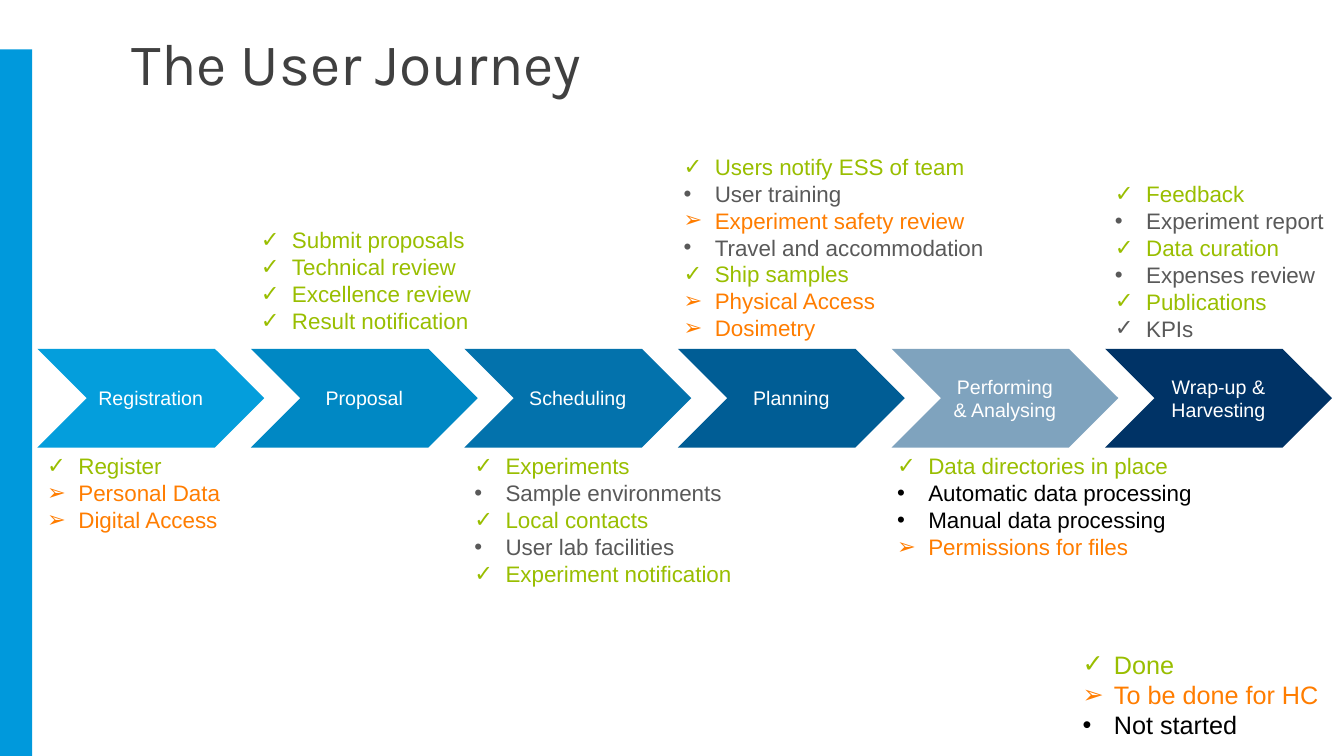
from dataclasses import dataclass
from typing import NamedTuple

from lxml import etree
from pptx import Presentation
from pptx import util as u
from pptx.dml.color import RGBColor
from pptx.enum import shapes, text
from pptx.oxml.ns import qn


@dataclass(frozen=True)
class Theme:
    font: str = "Arial"
    head: str = "Karla"
    title: float = 42
    legend: float = 18
    body: float = 16
    label: float = 14
    bar: str = "0099DC"
    ink: str = "404040"
    white: str = "FFFFFF"
    green: str = "99BE00"
    orange: str = "FF7D00"
    grey: str = "595959"
    black: str = "000000"


THEME = Theme()

# Grid: one column per step, rows are text lines
WIDE, HIGH = 13.33, 7.5
EDGE, COL = 0.37, 2.118
TOP, BASE = 3.46, 4.44
STEP_W = 2.25
PAD, LINE = 0.1, 0.27
INDENT = 0.31


class Mark(NamedTuple):
    sign: str
    color: str


DONE = Mark("✓", THEME.green)
NEXT = Mark("➢", THEME.orange)
OPEN = Mark("•", THEME.grey)
IDLE = Mark("•", THEME.black)
PLAIN = Mark("✓", THEME.grey)


class Step(NamedTuple):
    name: str
    color: str
    alpha: int = 100


@dataclass(frozen=True)
class Tasks:
    col: float
    above: bool
    items: list[tuple[str, Mark]]
    span: float = 1.6
    lift: float = 0


STEPS = [
    Step("Registration", "049EDC"),
    Step("Proposal", "0088C4"),
    Step("Scheduling", "0372AC"),
    Step("Planning", "005D95"),
    Step("Performing & Analysing", "00487E", 50),
    Step("Wrap-up & Harvesting", "003366"),
]

TASKS = [
    Tasks(0, False, [("Register", DONE), ("Personal Data", NEXT),
                     ("Digital Access", NEXT)]),
    Tasks(1, True, [("Submit proposals", DONE), ("Technical review", DONE),
                    ("Excellence review", DONE),
                    ("Result notification", DONE)], lift=0.3),
    Tasks(2, False, [("Experiments", DONE), ("Sample environments", OPEN),
                     ("Local contacts", DONE), ("User lab facilities", OPEN),
                     ("Experiment notification", DONE)]),
    Tasks(2.98, True, [("Users notify ESS of team", DONE),
                       ("User training", OPEN),
                       ("Experiment safety review", NEXT),
                       ("Travel and accommodation", OPEN),
                       ("Ship samples", DONE), ("Physical Access", NEXT),
                       ("Dosimetry", NEXT)]),
    Tasks(3.98, False, [("Data directories in place", DONE),
                        ("Automatic data processing", IDLE),
                        ("Manual data processing", IDLE),
                        ("Permissions for files", NEXT)]),
    Tasks(5, True, [("Feedback", DONE), ("Experiment report", OPEN),
                    ("Data curation", DONE), ("Expenses review", OPEN),
                    ("Publications", DONE), ("KPIs", PLAIN)], span=1.12),
]

LEGEND = [("Done", DONE), ("To be done for HC", NEXT), ("Not started", IDLE)]


def place(left: float, top: float, width: float, height: float) -> list[int]:
    return [u.Inches(side) for side in (left, top, width, height)]


def style(part, size: float, color: str, font: str = THEME.font) -> None:
    for run in part.runs:
        run.font.size = u.Pt(size)
        run.font.name = font
        run.font.color.rgb = RGBColor.from_string(color)


def add_block(group, kind, box: list[int], color: str):
    block = group.add_shape(kind, *box)
    block.shadow.inherit = False
    block.fill.solid()
    block.fill.fore_color.rgb = RGBColor.from_string(color)
    block.line.fill.background()
    return block


def add_step(group, index: int, step: Step) -> None:
    box = place(EDGE + index * COL, TOP, STEP_W, BASE - TOP)
    block = add_block(group, shapes.MSO_SHAPE.CHEVRON, box, step.color)
    if step.alpha < 100:
        tint = block.fill._xPr.find(".//" + qn("a:srgbClr"))
        etree.SubElement(tint, qn("a:alpha"), val=str(step.alpha * 1000))
    frame = block.text_frame
    frame.word_wrap = True
    frame.vertical_anchor = text.MSO_ANCHOR.MIDDLE
    frame.text = step.name
    part = frame.paragraphs[0]
    part.alignment = text.PP_ALIGN.CENTER
    style(part, THEME.label, THEME.white)


def add_list(slide, box: list[int], items: list[tuple[str, Mark]],
             size: float, wrap: bool = True) -> None:
    frame = slide.shapes.add_textbox(*box).text_frame
    frame.word_wrap = wrap
    frame.text = "\n".join(name for name, _ in items)
    for part, (_, mark) in zip(frame.paragraphs, items):
        props = part._p.get_or_add_pPr()
        props.set("marL", str(u.Inches(INDENT)))
        props.set("indent", str(-u.Inches(INDENT)))
        etree.SubElement(props, qn("a:buFont"), typeface=THEME.font)
        etree.SubElement(props, qn("a:buChar"), char=mark.sign)
        style(part, size, mark.color)


def add_tasks(slide, tasks: Tasks) -> None:
    height = PAD + LINE * len(tasks.items)
    top = TOP - height - tasks.lift * LINE if tasks.above else BASE
    box = place(EDGE + tasks.col * COL, top, tasks.span * COL, height)
    add_list(slide, box, tasks.items, THEME.body)


def add_title(slide, name: str) -> None:
    frame = slide.shapes.add_textbox(*place(1.21, 0.29, 10.24, 0.72)).text_frame
    frame.word_wrap = True
    frame.margin_bottom = u.Inches(0.02)
    frame.text = name
    part = frame.paragraphs[0]
    part.line_spacing = 0.9
    style(part, THEME.title, THEME.ink, THEME.head)


def main() -> None:
    deck = Presentation()
    deck.slide_width, deck.slide_height = u.Inches(WIDE), u.Inches(HIGH)
    slide = deck.slides.add_slide(deck.slide_layouts[6])

    # Side bar and title
    add_block(slide.shapes, shapes.MSO_SHAPE.RECTANGLE,
              place(0, 0.49, 0.32, HIGH - 0.49), THEME.bar)
    add_title(slide, "The User Journey")

    # Chain of steps
    chain = slide.shapes.add_group_shape().shapes
    for index, step in enumerate(STEPS):
        add_step(chain, index, step)

    # Tasks around the chain
    for tasks in TASKS:
        add_tasks(slide, tasks)

    # Legend
    add_list(slide, place(10.64, 6.39, 2.57, 1.01), LEGEND,
             THEME.legend, wrap=False)

    deck.save("out.pptx")


if __name__ == "__main__":
    main()
